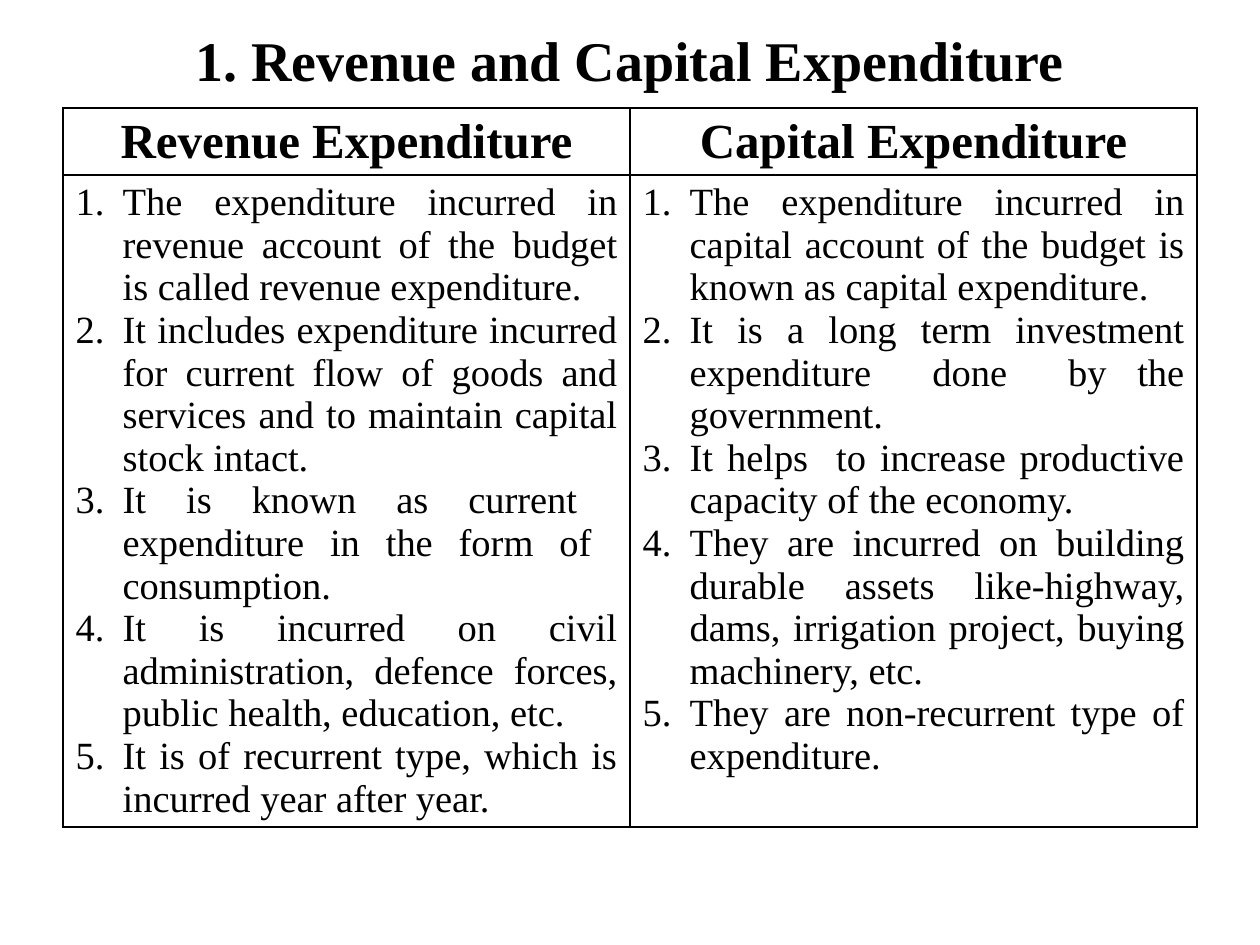
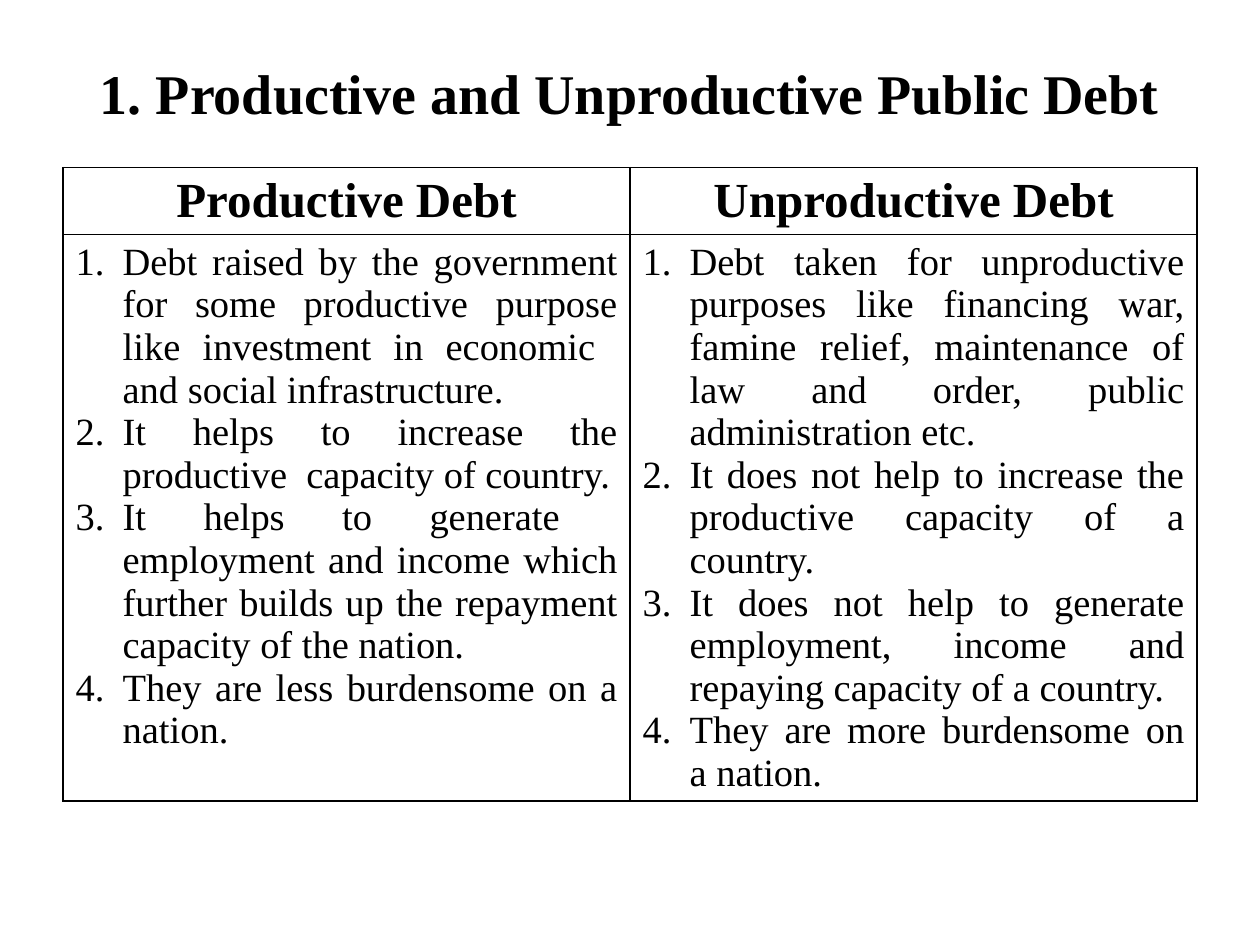
from lxml.etree import SubElement
from pptx import Presentation
from pptx.dml.color import RGBColor
from pptx.enum.text import MSO_ANCHOR, PP_ALIGN
from pptx.oxml.ns import qn
from pptx.util import Cm, Pt

BLACK = RGBColor(0, 0, 0)
LEFT, WIDTH = Cm(1.27), Cm(22.86)
HEAD = Cm(1.35)
INDENT = Cm(0.95)
BASE = {"name": "Times New Roman"}
TITLE = {**BASE, "size": Pt(32), "bold": True}
HEADER = {**BASE, "size": Pt(28), "bold": True}
POINT = {**BASE, "size": Pt(22), "bold": False}


class Deck:
    def __init__(self):
        self.prs = Presentation()
        self.prs.slide_width, self.prs.slide_height = Cm(25.4), Cm(19.05)
        self.slide = None

    def label(self, para, text, style, align):
        """Set the text of a paragraph in the given style."""
        para.text = text
        para.alignment = align
        font = para.runs[0].font
        for key, value in style.items():
            setattr(font, key, value)
        font.color.rgb = BLACK

    def title(self, text, top, height):
        """Start a slide and place its title."""
        self.slide = self.prs.slides.add_slide(self.prs.slide_layouts[5])
        box = self.slide.shapes.title
        place = {"left": LEFT, "top": top, "width": WIDTH, "height": height}
        for key, value in place.items():
            setattr(box, key, value)
        box.text_frame.vertical_anchor = MSO_ANCHOR.MIDDLE
        self.label(box.text_frame.paragraphs[0], text, TITLE, PP_ALIGN.CENTER)

    def frame(self, cell):
        """Give a cell thin black borders and no fill."""
        props = cell._tc.get_or_add_tcPr()
        for side in ("a:lnL", "a:lnR", "a:lnT", "a:lnB"):
            line = SubElement(props, qn(side), w=str(Pt(1)))
            fill = SubElement(line, qn("a:solidFill"))
            SubElement(fill, qn("a:srgbClr"), val=str(BLACK))
        cell.fill.background()

    def points(self, cell, items):
        """Fill a cell with a numbered, justified list."""
        text = cell.text_frame
        for i, item in enumerate(items):
            para = text.add_paragraph() if i else text.paragraphs[0]
            self.label(para, item, POINT, PP_ALIGN.JUSTIFY)
            props = para._p.get_or_add_pPr()
            props.set("marL", str(INDENT))
            props.set("indent", str(-INDENT))
            SubElement(props, qn("a:buFont"), typeface="+mj-lt")
            SubElement(props, qn("a:buAutoNum"), type="arabicPeriod")

    def table(self, columns, top, body):
        """Compare topics side by side: columns maps each header to its points."""
        shape = self.slide.shapes.add_table(
            2, len(columns), LEFT, top, WIDTH, HEAD + body)
        grid = shape.table
        grid.first_row = grid.horz_banding = False
        grid.rows[0].height, grid.rows[1].height = HEAD, body
        for col, (header, items) in enumerate(columns.items()):
            head, cell = grid.cell(0, col), grid.cell(1, col)
            head.vertical_anchor = MSO_ANCHOR.MIDDLE
            self.label(head.text_frame.paragraphs[0], header, HEADER,
                       PP_ALIGN.CENTER)
            self.points(cell, items)
            self.frame(head)
            self.frame(cell)


SPENDING = {
    "Revenue Expenditure": [
        "The expenditure incurred in revenue account of the budget is called "
        "revenue expenditure.",
        "It includes expenditure incurred for current flow of goods and "
        "services and to maintain capital stock intact.",
        "It is known as current  expenditure in the form of  consumption.",
        "It is incurred on civil administration, defence forces, public "
        "health, education, etc.",
        "It is of recurrent type, which is incurred year after year.",
    ],
    "Capital Expenditure": [
        "The expenditure incurred in capital account of the budget is known "
        "as capital expenditure.",
        "It is a long term investment expenditure  done  by the government.",
        "It helps  to increase productive capacity of the economy.",
        "They are incurred on building durable assets like-highway, dams, "
        "irrigation project, buying machinery, etc.",
        "They are non-recurrent type of expenditure.",
    ],
}
DEBT = {
    "Productive Debt": [
        "Debt raised by the government for some productive purpose like "
        "investment in economic  and social infrastructure.",
        "It helps to increase the productive  capacity of country.",
        "It helps to generate  employment and income which further builds up "
        "the repayment capacity of the nation.",
        "They are less burdensome on a nation.",
    ],
    "Unproductive Debt": [
        "Debt taken for unproductive purposes like financing war, famine "
        "relief, maintenance of law and order, public administration etc.",
        "It does not help to increase the productive capacity of a country.",
        "It does not help to generate employment, income and repaying "
        "capacity of a country.",
        "They are more burdensome on a nation.",
    ],
}


def main():
    deck = Deck()
    deck.title("1. Revenue and Capital Expenditure", Cm(0.2), Cm(1.98))
    deck.table(SPENDING, Cm(2.18), Cm(13.13))
    deck.title("1. Productive and Unproductive Public Debt", Cm(0.76), Cm(2.21))
    deck.table(DEBT, Cm(3.38), Cm(11.42))
    deck.prs.save("out.pptx")


if __name__ == "__main__":
    main()
